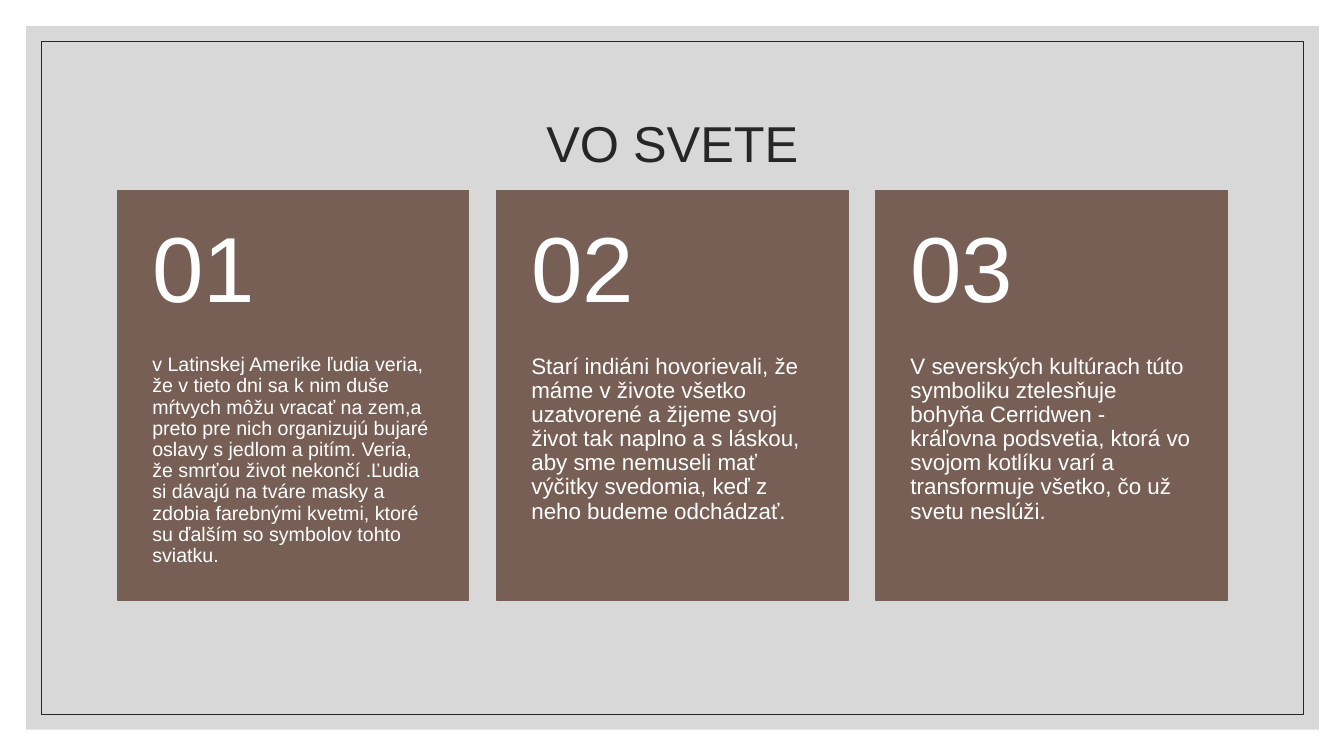
from dataclasses import dataclass

from lxml.etree import SubElement
from pptx import Presentation
from pptx.dml.color import RGBColor as Color
from pptx.enum.shapes import MSO_SHAPE as Kind
from pptx.enum.text import MSO_ANCHOR as Anchor, PP_ALIGN as Align
from pptx.oxml.ns import qn
from pptx.shapes.autoshape import Shape
from pptx.slide import Slide
from pptx.util import Emu, Pt

SCALE = 9144  # EMU per px, 100 px to the inch


@dataclass(frozen=True)
class Theme:
    font: str = "Arial"
    panel: str = "BFBFBF"
    ink: str = "262626"
    card: str = "775F55"
    white: str = "FFFFFF"
    title: int = 36
    number: int = 66
    leading: float = 0.9


@dataclass(frozen=True)
class Box:
    left: int
    top: int
    width: int
    height: int

    def emu(self) -> list[Emu]:
        return [px(n) for n in (self.left, self.top, self.width, self.height)]


@dataclass(frozen=True)
class Card:
    text: str
    size: int


THEME = Theme()
CARDS = [
    Card("v Latinskej Amerike ľudia veria, že v tieto dni sa k nim duše mŕtvych "
         "môžu vracať na zem,a preto pre nich organizujú bujaré oslavy s jedlom "
         "a pitím. Veria, že smrťou život nekončí .Ľudia si dávajú na tváre masky "
         "a zdobia farebnými kvetmi, ktoré su ďalším so symbolov tohto sviatku.", 14),
    Card("Starí indiáni hovorievali, že máme v živote všetko uzatvorené a žijeme "
         "svoj život tak naplno a s láskou, aby sme nemuseli mať výčitky svedomia, "
         "keď z neho budeme odchádzať.", 16),
    Card("V severských kultúrach túto symboliku ztelesňuje bohyňa Cerridwen - "
         "kráľovna podsvetia, ktorá vo svojom kotlíku varí a transformuje všetko, "
         "čo už svetu neslúži.", 16),
]
LEFT, TOP, WIDTH, STEP = 117, 189, 348, 376
HEAD, BODY = 163, 244  # heights of the number and text areas


def px(count: int) -> Emu:
    return Emu(count * SCALE)


def add_rect(slide: Slide, box: Box, fill: str = "", line: str = "",
             weight: float = 1) -> Shape:
    rect = slide.shapes.add_shape(Kind.RECTANGLE, *box.emu())
    rect.shadow.inherit = False
    if fill:
        rect.fill.solid()
        rect.fill.fore_color.rgb = Color.from_string(fill)
    else:
        rect.fill.background()
    if line:
        rect.line.color.rgb = Color.from_string(line)
        rect.line.width = Pt(weight)
    else:
        rect.line.fill.background()
    return rect


def add_text(slide: Slide, box: Box, text: str, size: int, color: str,
             insets: tuple[int, int, int, int], anchor: Anchor = Anchor.MIDDLE,
             align: Align = Align.LEFT) -> None:
    frame = slide.shapes.add_textbox(*box.emu()).text_frame
    frame.word_wrap = True
    frame.vertical_anchor = anchor
    (frame.margin_left, frame.margin_top,
     frame.margin_right, frame.margin_bottom) = map(px, insets)
    para = frame.paragraphs[0]
    para.text = text
    para.alignment = align
    para.line_spacing = THEME.leading
    para.font.name = THEME.font
    para.font.size = Pt(size)
    para.font.color.rgb = Color.from_string(color)


def add_card(slide: Slide, index: int, card: Card) -> None:
    left = LEFT + index * STEP
    add_rect(slide, Box(left, TOP, WIDTH, HEAD + BODY), THEME.card, THEME.card)
    add_text(slide, Box(left, TOP + HEAD, WIDTH, BODY), card.text, card.size,
             THEME.white, (34, 0, 34, 36), Anchor.TOP)
    add_text(slide, Box(left, TOP, WIDTH, HEAD), f"{index + 1:02}", THEME.number,
             THEME.white, (34, 18, 34, 18))


def main() -> None:
    deck = Presentation()
    deck.slide_width, deck.slide_height = px(1333), px(750)
    slide = deck.slides.add_slide(deck.slide_layouts[6])

    # Backdrop: translucent panel and thin frame
    panel = add_rect(slide, Box(26, 26, 1282, 698), THEME.panel)
    tint = panel.fill._xPr.find(qn("a:solidFill"))[0]
    SubElement(tint, qn("a:alpha"), val="60000")
    add_rect(slide, Box(41, 41, 1252, 668), line=THEME.ink, weight=0.5)

    # Title
    add_text(slide, Box(117, 70, 1100, 150), "VO SVETE", THEME.title, THEME.ink,
             (10, 5, 10, 5), align=Align.CENTER)

    # Numbered cards
    for index, card in enumerate(CARDS):
        add_card(slide, index, card)

    deck.save("out.pptx")


if __name__ == "__main__":
    main()
